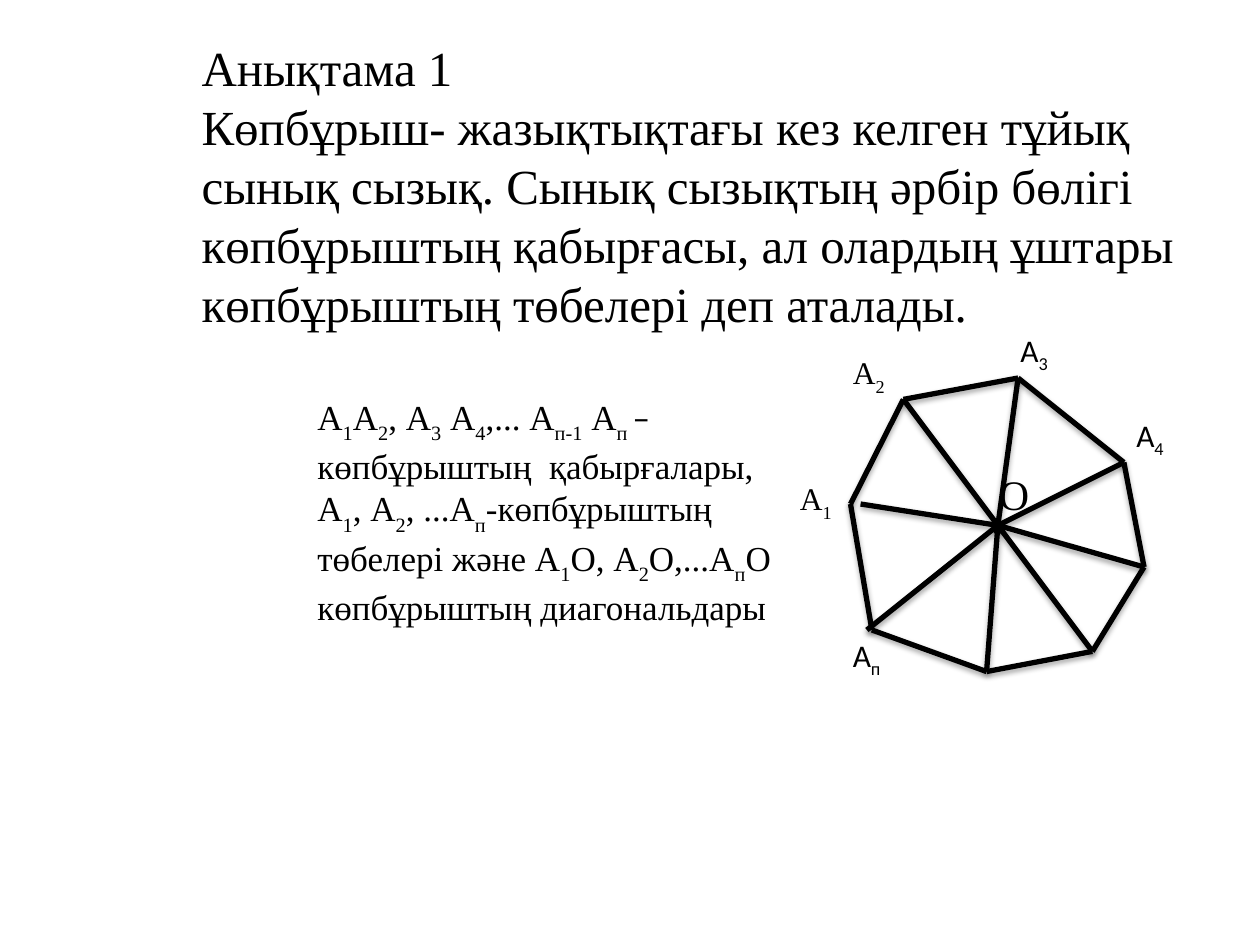
from dataclasses import dataclass

from lxml import etree
from pptx import Presentation
from pptx.dml.color import RGBColor
from pptx.enum import shapes, text
from pptx.oxml import parse_xml
from pptx.util import Inches, Pt

SERIF = "Times New Roman"
SANS = "Calibri"
BLACK = "000000"
DRAWING_NS = "http://schemas.openxmlformats.org/drawingml/2006/main"
SHADOW_XML = (
    f'<a:effectLst xmlns:a="{DRAWING_NS}">'
    '<a:outerShdw blurRad="40000" dist="23000" dir="5400000" rotWithShape="0">'
    f'<a:srgbClr val="{BLACK}"><a:alpha val="35000"/></a:srgbClr>'
    "</a:outerShdw></a:effectLst>"
)

Point = tuple[float, float]


@dataclass
class Label:
    """A text box; underscores in the text switch subscript on and off."""
    paragraphs: list[str]
    left: float
    top: float
    width: float
    height: float
    size: float
    font: str = SERIF
    subscript: int = -30
    wrap: bool = False
    anchor: text.MSO_ANCHOR = text.MSO_ANCHOR.TOP


def color(value: str) -> RGBColor:
    return RGBColor.from_string(value)


def format_run(run, font: str, size: float) -> None:
    run.font.name = font
    run.font.size = Pt(size)
    run.font.color.rgb = color(BLACK)


def place(shape, left: float, top: float, width: float, height: float) -> None:
    shape.left, shape.top = Inches(left), Inches(top)
    shape.width, shape.height = Inches(width), Inches(height)


def add_label(slide, label: Label) -> None:
    box = slide.shapes.add_textbox(
        Inches(label.left), Inches(label.top), Inches(label.width), Inches(label.height))
    frame = box.text_frame
    frame.word_wrap = label.wrap
    frame.auto_size = text.MSO_AUTO_SIZE.SHAPE_TO_FIT_TEXT
    frame.vertical_anchor = label.anchor
    for index, content in enumerate(label.paragraphs):
        paragraph = frame.add_paragraph() if index else frame.paragraphs[0]
        for position, part in enumerate(content.split("_")):
            if not part:
                continue
            run = paragraph.add_run()
            run.text = part
            format_run(run, SANS if part == "–" else label.font, label.size)
            if position % 2:
                run._r.get_or_add_rPr().set("baseline", str(label.subscript * 1000))


def add_segment(slide, start: Point, end: Point) -> None:
    line = slide.shapes.add_connector(
        shapes.MSO_CONNECTOR.STRAIGHT, *(Inches(value) for value in start + end))
    line.line.color.rgb = color(BLACK)
    line.line.width = Pt(3)
    line._element.spPr.append(parse_xml(etree.tostring(etree.fromstring(SHADOW_XML))))


DEFINITION = [
    "Анықтама 1",
    "Көпбұрыш- жазықтықтағы кез келген тұйық сынық сызық. Сынық сызықтың әрбір "
    "бөлігі көпбұрыштың қабырғасы, ал олардың ұштары көпбұрыштың төбелері деп аталады.",
]

EXPLANATION = Label(
    ["А_1_А_2_, А_3_ А_4_,... А_п-1_ А_п _–__көпбұрыштың  қабырғалары,",
     "А_1_, А_2_, ...А_п_-көпбұрыштың төбелері және "
     "А_1_О, А_2_О,...А_п_О көпбұрыштың диагональдары"],
    2.42, 3.17, 4, 1.78, 20, wrap=True, anchor=text.MSO_ANCHOR.MIDDLE)

# Polygon corners, clockwise from A1 to An
CORNERS: list[Point] = [
    (6.75, 4), (7.17, 3.17), (8.08, 3), (8.92, 3.67),
    (9.08, 4.5), (8.67, 5.17), (7.83, 5.33), (6.92, 5),
]
CENTER: Point = (7.92, 4.17)
# The first and last spokes start slightly off their corners
SPOKE_STARTS: list[Point] = [(6.83, 4), *CORNERS[1:-1], (6.88, 5)]

VERTEX_LABELS = [
    Label(["А_1_"], 6.25, 3.75, 0.47, 0.4, 18),
    Label(["А_2_"], 6.67, 2.75, 0.47, 0.4, 18),
    Label(["А_3_"], 8, 2.58, 0.43, 0.4, 18, SANS, -25),
    Label(["А_4_"], 8.92, 3.25, 0.47, 0.4, 18, SANS, -25),
    Label(["А_п_"], 6.67, 5, 0.44, 0.4, 18, SANS, -25),
]
CENTER_DOT = Label(["."], 7.75, 3.58, 0.25, 0.84, 44, SANS, wrap=True)
CENTER_LABEL = Label(["О"], 7.83, 3.67, 1.17, 0.5, 24, wrap=True)


def add_definition(slide) -> None:
    title = slide.shapes.title
    place(title, 1.5, 0.25, 8.17, 2.46)
    frame = title.text_frame
    frame.text = "\n".join(DEFINITION)
    frame.word_wrap = True
    frame.auto_size = text.MSO_AUTO_SIZE.SHAPE_TO_FIT_TEXT
    frame.vertical_anchor = text.MSO_ANCHOR.TOP
    for paragraph in frame.paragraphs:
        paragraph.alignment = text.PP_ALIGN.LEFT
        for run in paragraph.runs:
            format_run(run, SERIF, 28)


def main() -> None:
    presentation = Presentation()
    presentation.slide_width, presentation.slide_height = Inches(10), Inches(7.5)
    slide = presentation.slides.add_slide(presentation.slide_layouts[5])

    # Definition and explanation
    add_definition(slide)
    add_label(slide, EXPLANATION)

    # Polygon sides and corner names
    for start, end in zip(CORNERS, CORNERS[1:] + CORNERS[:1]):
        add_segment(slide, start, end)
    for label in VERTEX_LABELS:
        add_label(slide, label)

    # Spokes meeting at the centre
    add_label(slide, CENTER_DOT)
    for start in SPOKE_STARTS:
        add_segment(slide, start, CENTER)
    add_label(slide, CENTER_LABEL)

    presentation.save("out.pptx")


if __name__ == "__main__":
    main()
